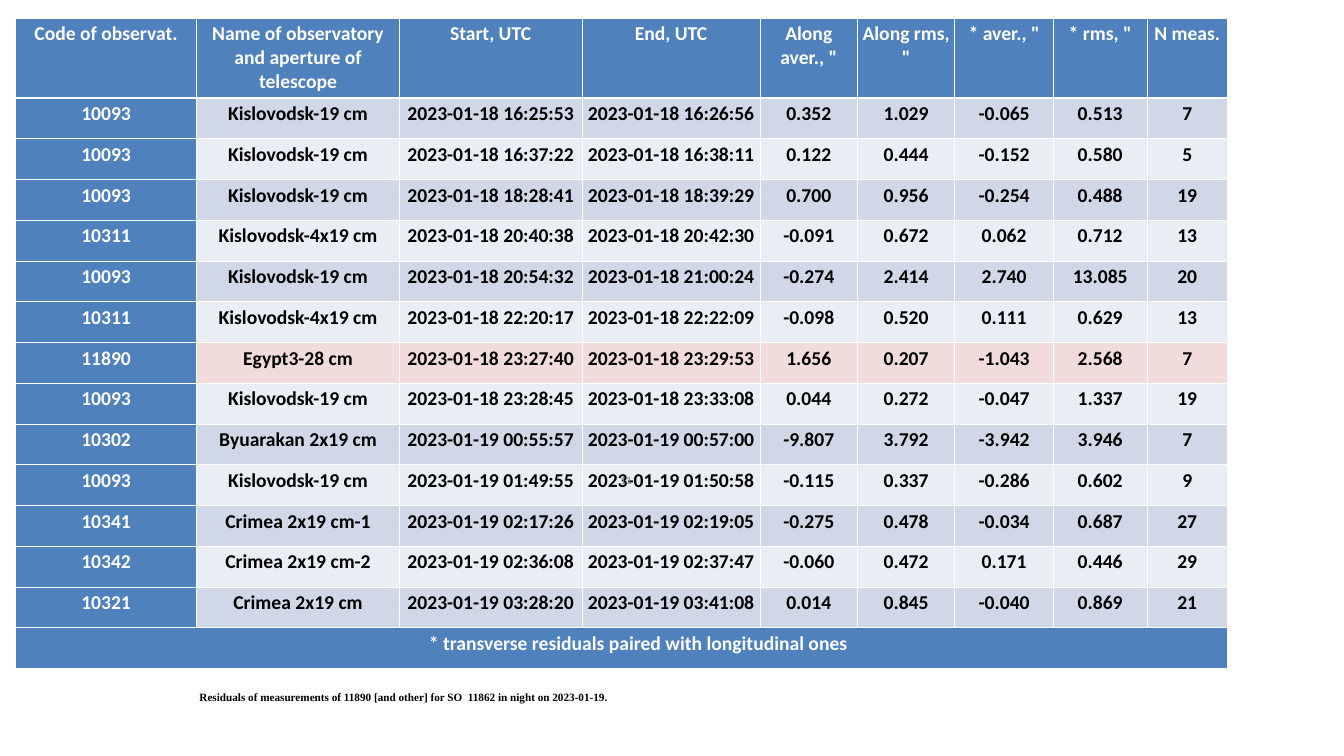
from lxml import etree
from pptx import Presentation
from pptx.dml.color import RGBColor
from pptx.enum.text import MSO_ANCHOR, PP_ALIGN
from pptx.oxml.ns import qn
from pptx.util import Cm, Pt

WHITE = RGBColor(0xFF, 0xFF, 0xFF)
BLACK = RGBColor(0x00, 0x00, 0x00)
GREY = RGBColor(0x8C, 0x8C, 0x8C)
BLUE = RGBColor(0x4F, 0x81, 0xBD)
BAND_DARK = RGBColor(0xD0, 0xD8, 0xE8)
BAND_LIGHT = RGBColor(0xE9, 0xED, 0xF4)
PINK = RGBColor(0xF2, 0xDC, 0xDB)

HEADER = ("Code of observat.", "Name of observatory and aperture of telescope",
          "Start, UTC", "End, UTC", 'Along aver., "', 'Along rms, "',
          '* aver., "', '* rms, "', "N meas.")
ROWS = [
    ("10093", "Kislovodsk-19 cm", "2023-01-18 16:25:53", "2023-01-18 16:26:56",
     "0.352", "1.029", "-0.065", "0.513", "7"),
    ("10093", "Kislovodsk-19 cm", "2023-01-18 16:37:22", "2023-01-18 16:38:11",
     "0.122", "0.444", "-0.152", "0.580", "5"),
    ("10093", "Kislovodsk-19 cm", "2023-01-18 18:28:41", "2023-01-18 18:39:29",
     "0.700", "0.956", "-0.254", "0.488", "19"),
    ("10311", "Kislovodsk-4x19 cm", "2023-01-18 20:40:38", "2023-01-18 20:42:30",
     "-0.091", "0.672", "0.062", "0.712", "13"),
    ("10093", "Kislovodsk-19 cm", "2023-01-18 20:54:32", "2023-01-18 21:00:24",
     "-0.274", "2.414", "2.740", "13.085", "20"),
    ("10311", "Kislovodsk-4x19 cm", "2023-01-18 22:20:17", "2023-01-18 22:22:09",
     "-0.098", "0.520", "0.111", "0.629", "13"),
    ("11890", "Egypt3-28 cm", "2023-01-18 23:27:40", "2023-01-18 23:29:53",
     "1.656", "0.207", "-1.043", "2.568", "7"),
    ("10093", "Kislovodsk-19 cm", "2023-01-18 23:28:45", "2023-01-18 23:33:08",
     "0.044", "0.272", "-0.047", "1.337", "19"),
    ("10302", "Byuarakan 2x19 cm", "2023-01-19 00:55:57", "2023-01-19 00:57:00",
     "-9.807", "3.792", "-3.942", "3.946", "7"),
    ("10093", "Kislovodsk-19 cm", "2023-01-19 01:49:55", "2023-01-19 01:50:58",
     "-0.115", "0.337", "-0.286", "0.602", "9"),
    ("10341", "Crimea 2x19 cm-1", "2023-01-19 02:17:26", "2023-01-19 02:19:05",
     "-0.275", "0.478", "-0.034", "0.687", "27"),
    ("10342", "Crimea 2x19 cm-2", "2023-01-19 02:36:08", "2023-01-19 02:37:47",
     "-0.060", "0.472", "0.171", "0.446", "29"),
    ("10321", "Crimea 2x19 cm", "2023-01-19 03:28:20", "2023-01-19 03:41:08",
     "0.014", "0.845", "-0.040", "0.869", "21"),
]
FOOTNOTE = "* transverse residuals paired with longitudinal ones"
CAPTION = ("Residuals of measurements of 11890 [and other] for SO  11862 "
           "in night on 2023-01-19.")
PAGE_NUMBER = "11"
HIGHLIGHTED_CODE = "11890"

COL_WIDTHS = (6.86, 7.65, 6.91, 6.73, 3.68, 3.68, 3.73, 3.53, 3.05)
HEADER_HEIGHT, ROW_HEIGHT = 2.95, 1.54
CELL_MARGIN = Cm(0.15)


def style_text(p, size, font, color, bold, align):
    p.alignment = align
    for r in p.runs:
        r.font.size, r.font.name, r.font.bold = Pt(size), font, bold
        r.font.color.rgb = color


def set_borders(cell, bottom):
    """Draw white 1 pt lines round the cell, with its own width at the bottom."""
    tc_pr = cell._tc.get_or_add_tcPr()
    widths = (("a:lnL", 1), ("a:lnR", 1), ("a:lnT", 1), ("a:lnB", bottom))
    for i, (tag, width) in enumerate(widths):
        ln = etree.Element(qn(tag), w=str(Pt(width)))
        fill = etree.SubElement(ln, qn("a:solidFill"))
        etree.SubElement(fill, qn("a:srgbClr"), val=str(WHITE))
        tc_pr.insert(i, ln)


def fill_cell(cell, text, fill, color, bottom=1):
    cell.margin_left = cell.margin_right = CELL_MARGIN
    cell.margin_top = cell.margin_bottom = CELL_MARGIN
    cell.fill.solid()
    cell.fill.fore_color.rgb = fill
    set_borders(cell, bottom)
    cell.text_frame.text = text
    style_text(cell.text_frame.paragraphs[0], 21, "Calibri", color, True,
               PP_ALIGN.CENTER)


def add_residuals_table(slide):
    n_rows, n_cols = len(ROWS) + 2, len(HEADER)
    height = HEADER_HEIGHT + (n_rows - 1) * ROW_HEIGHT
    table = slide.shapes.add_table(n_rows, n_cols, Cm(0.58), Cm(0.69),
                                   Cm(sum(COL_WIDTHS)), Cm(height)).table
    for column, width in zip(table.columns, COL_WIDTHS):
        column.width = Cm(width)
    for i, row in enumerate(table.rows):
        row.height = Cm(ROW_HEIGHT if i else HEADER_HEIGHT)

    for j, text in enumerate(HEADER):
        fill_cell(table.cell(0, j), text, BLUE, WHITE, bottom=3)
    for i, values in enumerate(ROWS, 1):
        band = BAND_DARK if i % 2 else BAND_LIGHT
        if values[0] == HIGHLIGHTED_CODE:
            band = PINK
        for j, text in enumerate(values):
            fill, color = (band, BLACK) if j else (BLUE, WHITE)
            fill_cell(table.cell(i, j), text, fill, color)

    footer = table.cell(n_rows - 1, 0)
    footer.merge(table.cell(n_rows - 1, n_cols - 1))
    fill_cell(footer, FOOTNOTE, BLUE, WHITE)
    p_pr = footer.text_frame.paragraphs[0]._p.get_or_add_pPr()
    p_pr.set("marL", str(Cm(1.27)))
    p_pr.set("indent", "0")


def add_label(slide, text, left, top, width, height, font, color, bold, align):
    tf = slide.shapes.add_textbox(Cm(left), Cm(top), Cm(width), Cm(height)).text_frame
    tf.word_wrap = True
    tf.vertical_anchor = MSO_ANCHOR.MIDDLE
    tf.text = text
    style_text(tf.paragraphs[0], 12, font, color, bold, align)


def main():
    prs = Presentation()
    prs.slide_width, prs.slide_height = Cm(50.8), Cm(28.58)
    slide = prs.slides.add_slide(prs.slide_layouts[6])
    add_residuals_table(slide)
    add_label(slide, CAPTION, 7.29, 25.6, 31.17, 1.52,
              "Times New Roman", BLACK, True, PP_ALIGN.LEFT)
    add_label(slide, PAGE_NUMBER, 18.21, 17.65, 5.92, 1.02,
              "Calibri", GREY, False, PP_ALIGN.RIGHT)
    prs.save("out.pptx")


if __name__ == "__main__":
    main()
